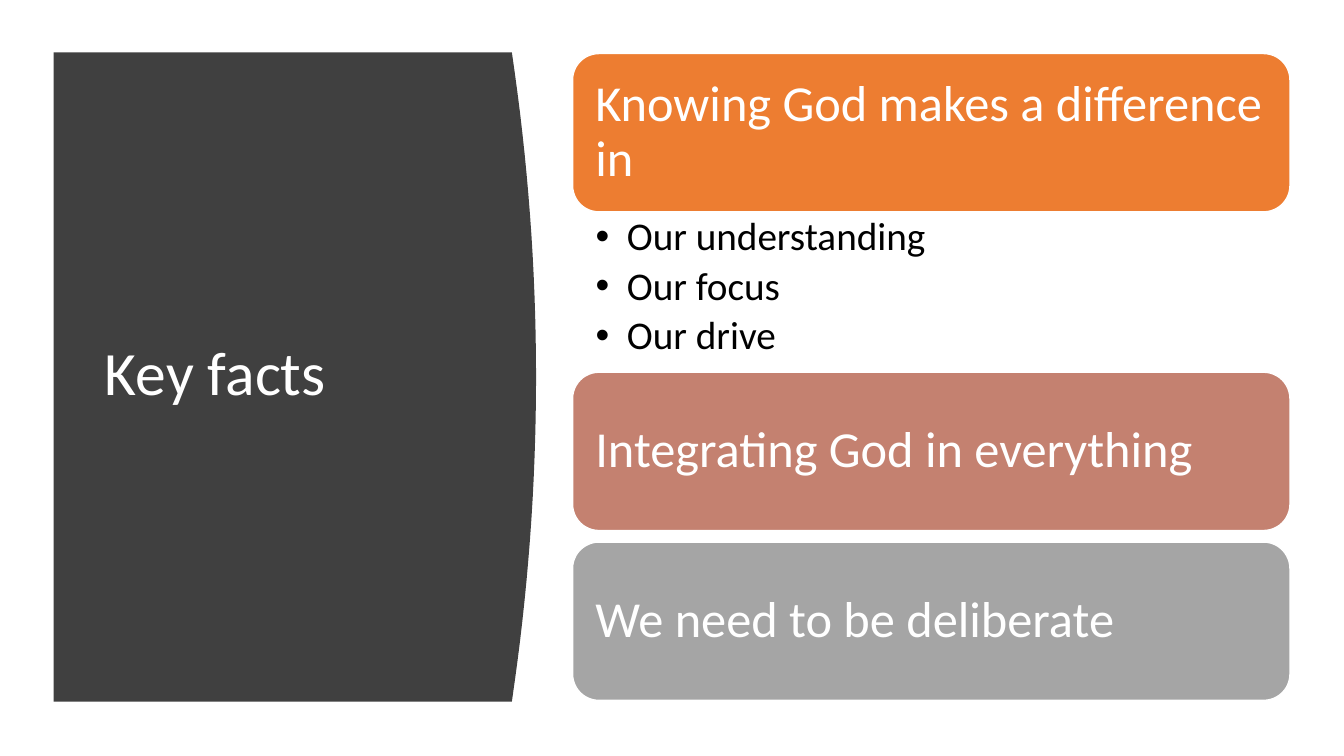
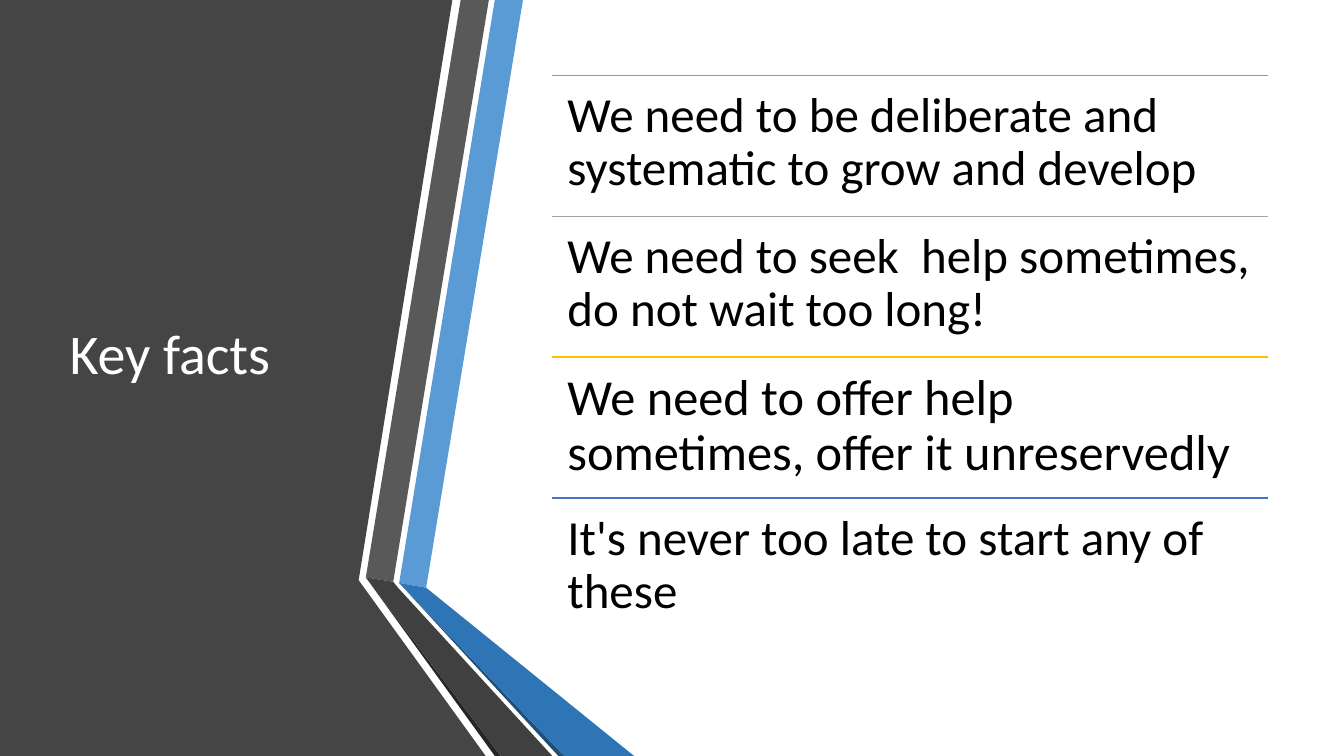
from typing import NamedTuple

from lxml import etree
from pptx import Presentation
from pptx.dml.color import RGBColor
from pptx.enum.shapes import MSO_CONNECTOR, MSO_SHAPE
from pptx.enum.text import MSO_ANCHOR, MSO_AUTO_SIZE, PP_ALIGN
from pptx.oxml.ns import qn
from pptx.util import Cm, Pt

ROUNDED = MSO_SHAPE.ROUNDED_RECTANGLE
STRAIGHT = MSO_CONNECTOR.STRAIGHT
TOP, MIDDLE = MSO_ANCHOR.TOP, MSO_ANCHOR.MIDDLE
LEFT = PP_ALIGN.LEFT
NO_AUTOFIT = MSO_AUTO_SIZE.NONE

FONT = "Calibri"
WHITE, BLACK = "FFFFFF", "000000"
CHARCOAL, BACKDROP = "404040", "454545"
ORANGE, CLAY, SILVER = "ED7D31", "C48170", "A5A5A5"
GOLD, ROYAL = "FFC000", "4472C4"
SKY, OCEAN, NAVY = "5B9BD5", "2E75B6", "1F4E79"
GRAPHITE, INK = "595959", "262626"

WIDTH, HEIGHT = 33.87, 19.05
TITLE_ONLY = 5
INSET = 0.38


class Box(NamedTuple):
    left: float
    top: float
    width: float
    height: float

    def lengths(self):
        return [Cm(value) for value in self]


def rgb(code):
    return RGBColor.from_string(code)


def paint(shape, fill, line=None):
    shape.shadow.inherit = False
    shape.fill.solid()
    shape.fill.fore_color.rgb = rgb(fill)
    if line:
        shape.line.color.rgb = rgb(line)
        shape.line.width = Pt(1)
    else:
        shape.line.fill.background()


def write(frame, lines, size, color, anchor, insets=None):
    frame.word_wrap = True
    frame.auto_size = NO_AUTOFIT
    frame.vertical_anchor = anchor
    if insets:
        (frame.margin_left, frame.margin_top,
         frame.margin_right, frame.margin_bottom) = [Cm(i) for i in insets]
    frame.text = "\n".join(lines)
    for paragraph in frame.paragraphs:
        paragraph.alignment = LEFT
        paragraph.line_spacing = 0.9
        paragraph.font.name = FONT
        paragraph.font.size = Pt(size)
        paragraph.font.color.rgb = rgb(color)


def add_bullet(paragraph, indent):
    properties = paragraph._p.get_or_add_pPr()
    properties.set("marL", str(Cm(indent)))
    properties.set("indent", str(-Cm(indent)))
    etree.SubElement(properties, qn("a:buFont"), typeface="Arial")
    etree.SubElement(properties, qn("a:buChar"), char="•")


def add_outline(slide, box, points, fill):
    corners = [(Cm(box.left + x), Cm(box.top + y)) for x, y in points]
    builder = slide.shapes.build_freeform(*corners[0], scale=1.0)
    builder.add_line_segments(corners[1:], close=True)
    paint(builder.convert_to_shape(), fill)


def add_rule(slide, box, color):
    left, top, width, _ = box.lengths()
    rule = slide.shapes.add_connector(STRAIGHT, left, top, left + width, top)
    rule.line.color.rgb = rgb(color)
    rule.line.width = Pt(1)
    etree.SubElement(rule._element.spPr, qn("a:effectLst"))


def place_title(slide, box, text, size):
    title = slide.shapes.title
    title.left, title.top, title.width, title.height = box.lengths()
    write(title.text_frame, [text], size, WHITE, MIDDLE)
    slide.shapes.element.append(title.element)


def add_curved_panel(slide, box, bulge=0.61, steps=32):
    straight = box.width - bulge
    points = [(0, 0)]
    for step in range(steps + 1):
        t = step / steps
        points.append((straight + 4 * bulge * t * (1 - t), box.height * t))
    points.append((0, box.height))
    add_outline(slide, box, points, CHARCOAL)


def add_card(slide, box, text, fill):
    card = slide.shapes.add_shape(ROUNDED, *box.lengths())
    paint(card, fill, WHITE)
    write(card.text_frame, [text], 36, WHITE, MIDDLE, [INSET] * 4)


def add_bullet_list(slide, box, items):
    frame = slide.shapes.add_textbox(*box.lengths()).text_frame
    write(frame, items, 28, BLACK, TOP, (0.58, 0.13, 0.71, 0.13))
    for paragraph in frame.paragraphs:
        paragraph.space_after = Pt(5)
        add_bullet(paragraph, 0.79)


def add_card_stack(slide, box, cards):
    card_height, list_height, gap = 3.99, 4.04, 0.29
    top = box.top
    for text, fill, items in cards:
        add_card(slide, Box(box.left, top, box.width, card_height), text, fill)
        top += card_height
        if items:
            add_bullet_list(slide, Box(box.left, top, box.width, list_height), items)
            top += list_height
        else:
            top += gap


def add_folded_bands(slide, box):
    bottom = box.height
    grey_fold, blue_fold = (9.22, 14.55), (10.06, 14.69)
    grey_edge, blue_edge = (9.91, 14.66), (10.74, 14.81)
    bands = [
        (BACKDROP, [(0, 0), (11.4, 0), (9.04, 14.62), (12.24, bottom), (0, bottom)]),
        (SKY, [blue_fold, blue_edge, (13.18, 0), (12.47, 0)]),
        (GRAPHITE, [grey_fold, grey_edge, (12.32, 0), (11.61, 0)]),
        (INK, [grey_fold, (12.47, bottom), (12.62, bottom)]),
        (NAVY, [blue_fold, (14.07, bottom), (14.22, bottom)]),
        (OCEAN, [blue_fold, (14.22, bottom), (15.98, bottom), blue_edge]),
        (CHARCOAL, [grey_fold, (12.62, bottom), (13.92, bottom), (10.03, 14.81), grey_edge]),
    ]
    for fill, points in bands:
        add_outline(slide, box, points, fill)


def add_ruled_rows(slide, box, rows):
    pitch = box.height / len(rows)
    for index, (text, color, size) in enumerate(rows):
        row = Box(box.left, box.top + index * pitch, box.width, pitch)
        add_rule(slide, row, color)
        frame = slide.shapes.add_textbox(*row.lengths()).text_frame
        write(frame, [text], size, BLACK, TOP, [INSET] * 4)


def build_cards_slide(slide):
    add_curved_panel(slide, Box(1.35, 1.32, 12.16, 16.36))
    place_title(slide, Box(2.39, 2.82, 9.5, 13.31), "Key facts", 44)
    add_card_stack(slide, Box(14.43, 1.35, 18.08, 16.3), [
        ("Knowing God makes a difference in", ORANGE,
         ["Our understanding", "Our focus", "Our drive"]),
        ("Integrating God in everything", CLAY, []),
        ("We need to be deliberate", SILVER, []),
    ])


def build_rows_slide(slide):
    add_folded_bands(slide, Box(0, 0, 15.98, HEIGHT))
    place_title(slide, Box(1.5, 1.9, 7.72, 14.17), "Key facts", 40)
    add_ruled_rows(slide, Box(13.92, 1.9, 18.03, 14.2), [
        ("We need to be deliberate and systematic to grow and develop", ORANGE, 35),
        ("We need to seek  help sometimes, do not wait too long!", SILVER, 35),
        ("We need to offer help sometimes, offer it unreservedly", GOLD, 36),
        ("It's never too late to start any of these", ROYAL, 35),
    ])


def main():
    deck = Presentation()
    deck.slide_width, deck.slide_height = Cm(WIDTH), Cm(HEIGHT)
    for build in (build_cards_slide, build_rows_slide):
        build(deck.slides.add_slide(deck.slide_layouts[TITLE_ONLY]))
    deck.save("out.pptx")


if __name__ == "__main__":
    main()
